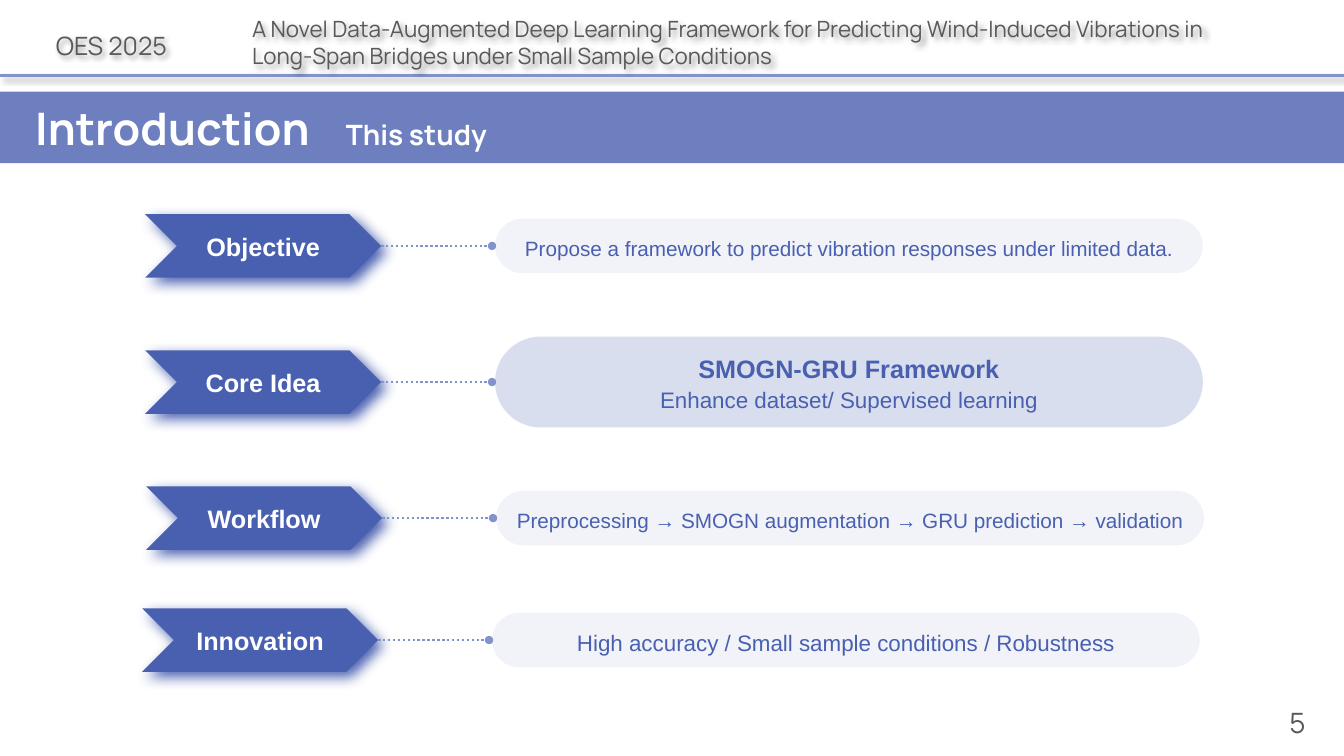
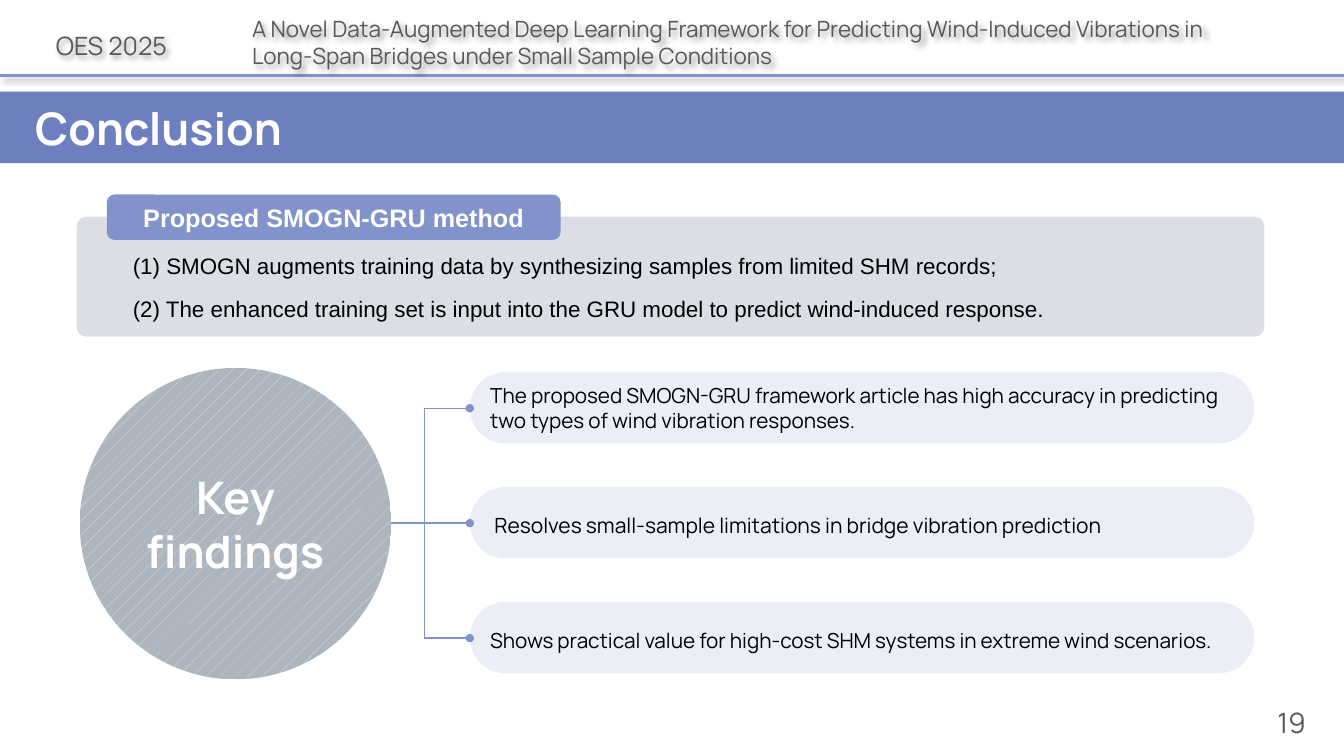
from lxml import etree
from pptx import Presentation
from pptx import util as u
from pptx.dml.color import RGBColor
from pptx.enum import dml, shapes, text
from pptx.oxml.ns import qn

WIDTH, HEIGHT = 13.33, 7.5
NAVY, PERIWINKLE, GREY = "4960B0", "8292CB", "595959"
WHITE, BLACK = "FFFFFF", "000000"
SOFT_SHADOW = (BLACK, 40, 4, 3)
GLOW_SHADOW = (NAVY, 100, 10, 5)
KIND = shapes.MSO_SHAPE
LINE = shapes.MSO_CONNECTOR.STRAIGHT
LEFT, CENTER, RIGHT = text.PP_ALIGN.LEFT, text.PP_ALIGN.CENTER, text.PP_ALIGN.RIGHT
MIDDLE, BOTTOM = text.MSO_ANCHOR.MIDDLE, text.MSO_ANCHOR.BOTTOM


def draw(page, kind, place, colour=None, opacity=100, shadow=None, weight=1, dot=False):
    """Add a shape, a line (place holds both ends) or, with kind None, a text box.

    A shadow is (colour, opacity, blur, distance) and falls at 45 degrees.
    """
    place = [u.Inches(length) for length in place]
    if kind is None:
        item = page.shapes.add_textbox(*place)
    elif kind is LINE:
        item = page.shapes.add_connector(kind, *place)
        item.line.width = u.Pt(weight)
        paint = item.line.fill
    else:
        item = page.shapes.add_shape(kind, *place)
        item.line.fill.background()
        paint = item.fill
    properties = item._element.spPr
    if colour:
        paint.solid()
        paint.fore_color.rgb = RGBColor.from_string(colour)
        if opacity < 100:
            shade = properties.find(".//" + qn("a:srgbClr"))
            etree.SubElement(shade, qn("a:alpha"), val=str(opacity * 1000))
    if dot:
        etree.SubElement(properties.find(qn("a:ln")), qn("a:tailEnd"), type="oval")
    effects = etree.SubElement(properties, qn("a:effectLst"))
    if shadow:
        tint, strength, blur, distance = shadow
        outer = etree.SubElement(effects, qn("a:outerShdw"), blurRad=str(u.Pt(blur)),
                                 dist=str(u.Pt(distance)), dir="2700000",
                                 algn="tl", rotWithShape="0")
        shade = etree.SubElement(outer, qn("a:srgbClr"), val=tint)
        etree.SubElement(shade, qn("a:alpha"), val=str(strength * 1000))
    return item


def write(box, lines, colour, font="Arial", align=CENTER, anchor=MIDDLE,
          spacing=1.0, insets=(0, 0, 0, 0)):
    """Fill a box with lines, each a list of (wording, size, bold) spans."""
    frame = box.text_frame
    frame.word_wrap = True
    frame.vertical_anchor = anchor
    (frame.margin_left, frame.margin_top,
     frame.margin_right, frame.margin_bottom) = [u.Inches(inset) for inset in insets]
    for index, spans in enumerate(lines):
        para = frame.add_paragraph() if index else frame.paragraphs[0]
        para.alignment = align
        para.line_spacing = spacing
        for wording, size, bold in spans:
            span = para.add_run()
            span.text = wording
            span.font.size = u.Pt(size)
            span.font.bold = bold
            span.font.name = font
            span.font.color.rgb = RGBColor.from_string(colour)


deck = Presentation()
deck.slide_width, deck.slide_height = u.Inches(WIDTH), u.Inches(HEIGHT)

# Header, title band and page number shared by both slides
titles = [
    ("5", [("Introduction\t", 32, True), ("This study", 20, True)]),
    ("19", [("Conclusion", 32, True)]),
]
for number, title in titles:
    page = deck.slides.add_slide(deck.slide_layouts[6])
    draw(page, LINE, (0, 0.75, WIDTH, 0.75), PERIWINKLE, shadow=SOFT_SHADOW, weight=2)
    band = draw(page, KIND.RECTANGLE, (0, 0.91, WIDTH, 0.71), NAVY, 80)
    write(band, [title], WHITE, "Manrope", LEFT, insets=(0.35, 0.05, 0.1, 0.05))
    tabs = etree.SubElement(band.text_frame.paragraphs[0]._p.get_or_add_pPr(), qn("a:tabLst"))
    etree.SubElement(tabs, qn("a:tab"), pos=str(u.Inches(3.08)), algn="l")
    event = draw(page, None, (0.37, 0.14, 1.47, 0.46), shadow=SOFT_SHADOW)
    write(event, [[("OES 2025", 18, False)]], GREY, "Manrope", anchor=BOTTOM)
    paper = draw(page, None, (2.5, 0.09, 9.5, 0.59), shadow=SOFT_SHADOW)
    write(paper, [[("A Novel Data-Augmented Deep Learning Framework for Predicting "
                    "Wind-Induced Vibrations in Long-Span Bridges under Small Sample "
                    "Conditions", 16, False)]], GREY, "Manrope", LEFT, BOTTOM)
    footer = draw(page, None, (11.81, 6.93, 1.14, 0.4))
    write(footer, [[(number, 20, False)]], GREY, "Manrope", RIGHT, BOTTOM)

introduction, conclusion = deck.slides

# Introduction: label, dotted line and pill in each row
rows = [
    ("Objective", 1.44, 2.44, 0.54, 10, 1.2,
     [[("Propose a framework to predict vibration responses under limited data.", 14.8, False)]]),
    ("Core Idea", 1.44, 3.79, 0.9, 30, 1.1,
     [[("SMOGN-GRU Framework", 18, True)],
      [("Enhance dataset/ Supervised learning", 16, False)]]),
    ("Workflow", 1.45, 5.14, 0.54, 10, 1.2,
     [[("Preprocessing → SMOGN augmentation → GRU prediction → validation", 14.8, False)]]),
    ("Innovation", 1.41, 6.35, 0.54, 10, 1.2,
     [[("High accuracy / Small sample conditions / Robustness", 16, False)]]),
]
LABEL_WIDTH, LABEL_HEIGHT = 2.34, 0.63
for label, left, center, height, opacity, spacing, lines in rows:
    pill = draw(introduction, KIND.ROUNDED_RECTANGLE,
                (left + 3.47, center - height / 2, 7.02, height), PERIWINKLE, opacity)
    pill.adjustments[0] = 0.5
    write(pill, lines, NAVY, spacing=spacing)
    chevron = draw(introduction, KIND.CHEVRON,
                   (left, center - LABEL_HEIGHT / 2, LABEL_WIDTH, LABEL_HEIGHT),
                   NAVY, shadow=GLOW_SHADOW)
    write(chevron, [[(label, 18, True)]], WHITE)
    link = draw(introduction, LINE, (left + LABEL_WIDTH, center, left + 3.44, center),
                PERIWINKLE, weight=1.75, dot=True)
    link.line.dash_style = dml.MSO_LINE.ROUND_DOT

# Conclusion: method panel
panel = draw(conclusion, KIND.ROUNDED_RECTANGLE, (0.76, 2.15, 11.78, 1.19), "102C53", 15)
panel.adjustments[0] = 0.08
write(panel, [
    [("(1) SMOGN augments training data by synthesizing samples from limited SHM records;",
      16, False)],
    [("(2) The enhanced training set is input into the GRU model to predict "
      "wind-induced response.", 16, False)],
], BLACK, align=LEFT, spacing=1.5, insets=(0.53, 0.13, 0.1, 0.05))
panel.text_frame.paragraphs[1].space_before = u.Pt(2)
tag = draw(conclusion, KIND.ROUNDED_RECTANGLE, (1.06, 1.93, 4.5, 0.45), PERIWINKLE)
write(tag, [[("Proposed SMOGN-GRU method", 18, True)]], WHITE)

# Conclusion: findings branching from the circle
findings = [
    ("The proposed SMOGN-GRU framework article has high accuracy in predicting "
     "two types of wind vibration responses.", 14.8, 1.0, 0.1),
    ("Resolves small-sample limitations in bridge vibration prediction", 15, 1.2, 0.14),
    ("Shows practical value for high-cost SHM systems in extreme wind scenarios.",
     14.8, 1.2, 0.1),
]
FIRST, PITCH, TRUNK, PILL_LEFT = 4.05, 1.14, 4.21, 4.66
draw(conclusion, LINE, (TRUNK, FIRST, TRUNK, FIRST + 2 * PITCH), PERIWINKLE)
for index, (finding, size, spacing, inset) in enumerate(findings):
    center = FIRST + index * PITCH
    start = 3.75 if index == 1 else TRUNK
    draw(conclusion, LINE, (start, center, PILL_LEFT, center), PERIWINKLE, dot=True)
    pill = draw(conclusion, KIND.ROUNDED_RECTANGLE,
                (PILL_LEFT, center - 0.36, 7.78, 0.71), PERIWINKLE, 15)
    pill.adjustments[0] = 0.5
    write(pill, [[(finding, size, False)]], BLACK, "Manrope", LEFT,
          spacing=spacing, insets=(inset, 0, 0.1, 0))

circle = draw(conclusion, KIND.OVAL, (0.79, 3.65, 3.09, 3.09))
circle.fill.patterned()
circle.fill.pattern = dml.MSO_PATTERN.PERCENT_5
circle.fill.fore_color.rgb = RGBColor.from_string("E4E6EA")
circle.fill.back_color.rgb = RGBColor.from_string("ADB5BF")
write(circle, [[("Key findings", 32, True)]], WHITE, "Manrope", insets=(0.1, 0.05, 0.1, 0.05))

deck.save("out.pptx")
